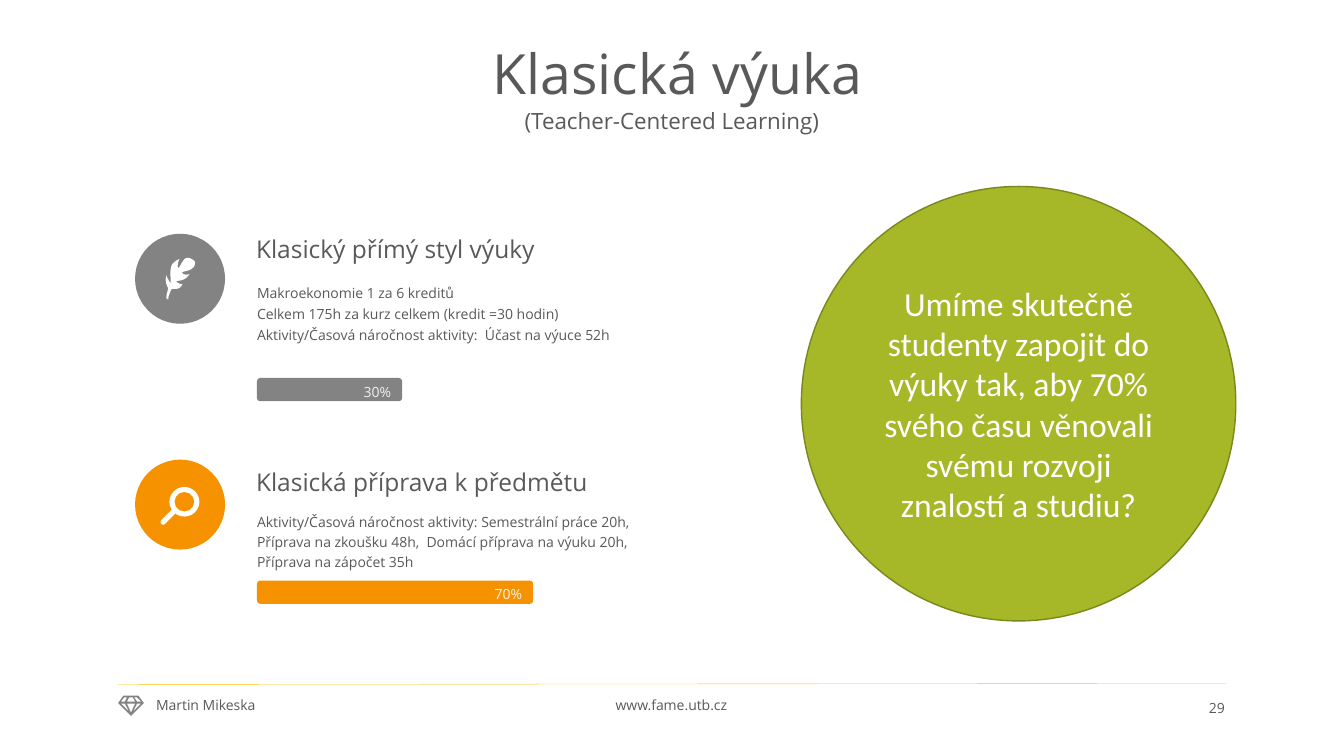
from lxml import etree
from pptx import Presentation
from pptx.dml.color import RGBColor
from pptx.enum.shapes import MSO_CONNECTOR, MSO_SHAPE
from pptx.enum.text import MSO_ANCHOR, MSO_AUTO_SIZE, PP_ALIGN
from pptx.oxml.ns import qn
from pptx.util import Pt

LEFT, CENTER, RIGHT = PP_ALIGN.LEFT, PP_ALIGN.CENTER, PP_ALIGN.RIGHT
TOP, MIDDLE = MSO_ANCHOR.TOP, MSO_ANCHOR.MIDDLE
OVAL, ROUNDED, DONUT = MSO_SHAPE.OVAL, MSO_SHAPE.ROUNDED_RECTANGLE, MSO_SHAPE.DONUT
COLORS = {name: RGBColor.from_string(value) for name, value in {
    "text": "595959", "gray": "838383", "orange": "F69200", "green": "A6B727",
    "olive": "7B871D", "gold": "FEC306", "white": "FFFFFF", "pale": "F2F2F2"}.items()}


def write(shape, lines, size, align=LEFT, anchor=TOP, spacing=None, color="text",
          font="Open Sans", inset=True):
    """Fill the shape with one paragraph per line, all formatted alike."""
    frame = shape.text_frame
    frame.word_wrap = True
    frame.auto_size = MSO_AUTO_SIZE.NONE
    frame.vertical_anchor = anchor
    if not inset:
        frame.margin_left = frame.margin_right = frame.margin_top = frame.margin_bottom = 0
    for index, line in enumerate(lines):
        para = frame.add_paragraph() if index else frame.paragraphs[0]
        para.text = line
        para.alignment = align
        para.line_spacing = spacing
        para.font.size = Pt(size)
        para.font.name = font
        para.font.color.rgb = COLORS[color]


def paint(shape, color):
    shape.shadow.inherit = False
    shape.fill.solid()
    shape.fill.fore_color.rgb = COLORS[color]
    shape.line.fill.background()
    return shape


deck = Presentation()
deck.slide_width, deck.slide_height = Pt(960), Pt(540)
page = deck.slides.add_slide(deck.slide_layouts[5])
shapes = page.shapes

# Title and subtitle
title = shapes.title
title.left, title.top, title.width, title.height = Pt(18), Pt(28), Pt(932), Pt(53.3)
write(title, ["Klasická výuka"], 39.6, CENTER, MIDDLE, 0.9)
subtitle = shapes.add_textbox(Pt(120), Pt(75), Pt(720), Pt(25))
write(subtitle, ["(Teacher-Centered Learning)"], 16, CENTER, MIDDLE, 0.9)

# Two sections: badge, heading, details and share bar
sections = [
    ("gray", 167, "Klasický přímý styl výuky", 162.7, 32.4, 0.9,
     ["Makroekonomie 1 za 6 kreditů",
      "Celkem 175h za kurz celkem (kredit =30 hodin)",
      "Aktivity/Časová náročnost aktivity:  Účast na výuce 52h"],
     200.2, 98, Pt(15), "30%", 270, 103.7),
    ("orange", 328.3, "Klasická příprava k předmětu", 326.9, 29.5, 1.2,
     ["Aktivity/Časová náročnost aktivity: Semestrální práce 20h, Příprava na "
      "zkoušku 48h,  Domácí příprava na výuku 20h, Příprava na zápočet 35h"],
     364.3, 39, 1.2, "70%", 414.7, 197.3),
]
for (color, badge_top, heading, heading_top, heading_height, heading_spacing, details,
     details_top, details_height, details_spacing, share, bar_top, bar_width) in sections:
    paint(shapes.add_shape(OVAL, Pt(96.5), Pt(badge_top), Pt(64.3), Pt(64.3)), color)
    heading_box = shapes.add_textbox(Pt(182.9), Pt(heading_top), Pt(262), Pt(heading_height))
    write(heading_box, [heading], 17.5, LEFT, MIDDLE, heading_spacing, inset=False)
    details_box = shapes.add_textbox(Pt(183.6), Pt(details_top), Pt(273), Pt(details_height))
    write(details_box, details, 10, spacing=details_spacing, inset=False)
    bar = paint(shapes.add_shape(ROUNDED, Pt(183.6), Pt(bar_top), Pt(bar_width), Pt(16.6)), color)
    bar.adjustments[0] = 0.15
    share_box = shapes.add_textbox(Pt(175.6 + bar_width - 40), Pt(bar_top + 1.4), Pt(40), Pt(13.7))
    write(share_box, [share], 10, RIGHT, TOP, 1.2, "pale", inset=False)

# Feather: each curve is two control points and an end point
feather_start = (120.2, 213.8)
feather_curves = [
    ((120.2, 211.7), (121, 210.2), (122.4, 206.6)), ((126, 205.9), (128.2, 207.4), (130.3, 203)),
    ((128.2, 203), (126, 201.6), (126, 200.9)), ((126, 200.2), (131.8, 201.6), (135.4, 195.8)),
    ((131, 197.3), (129.6, 194.4), (130.3, 194.4)), ((131, 193.7), (135.4, 193.7), (137.5, 191.5)),
    ((139, 190.8), (139.7, 187.9), (139, 186.5)), ((138.2, 185.8), (135.4, 183.6), (133.2, 184.3)),
    ((131, 184.3), (128.2, 191.5), (127.4, 191.5)), ((126.7, 191.5), (126.7, 187.9), (128.2, 185)),
    ((126, 185.8), (123.1, 187.9), (122.4, 190.1)), ((121, 193.7), (122.4, 201.6), (121.7, 202.3)),
    ((121.7, 202.3), (119.5, 198.7), (118.8, 196.6)), ((118.1, 199.4), (118.1, 202.3), (120.2, 205.9)),
    ((119.5, 208.8), (118.8, 211), (118.8, 212.4)), ((118.8, 213.8), (120.2, 213.8), (120.2, 213.8)),
]
outline, current = [], feather_start
for first, second, end in feather_curves:
    for step in range(1, 9):
        t = step / 8
        weights = ((1 - t) ** 3, 3 * t * (1 - t) ** 2, 3 * t * t * (1 - t), t ** 3)
        knots = (current, first, second, end)
        outline.append(tuple(Pt(sum(w * knot[axis] for w, knot in zip(weights, knots)))
                             for axis in (0, 1)))
    current = end
feather = shapes.build_freeform(Pt(feather_start[0]), Pt(feather_start[1]))
feather.add_line_segments(outline)
paint(feather.convert_to_shape(), "white")

# Magnifier
lens = paint(shapes.add_shape(DONUT, Pt(121), Pt(347.8), Pt(21.4), Pt(21.2)), "white")
lens.adjustments[0] = 0.17
handle = paint(shapes.add_shape(ROUNDED, Pt(113.2), Pt(367.4), Pt(14), Pt(3.8)), "white")
handle.adjustments[0] = 0.5
handle.rotation = -45

# Question
question = paint(shapes.add_shape(OVAL, Pt(572.4), Pt(133.2), Pt(310.3), Pt(310.3)), "green")
question.line.color.rgb = COLORS["olive"]
question.line.width = Pt(1)
write(question, ["Umíme skutečně studenty zapojit do výuky tak, aby 70% svého času "
                 "věnovali svému rozvoji znalostí a studiu?"],
      24, CENTER, MIDDLE, color="white", font="Calibri")

# Footer
rule = shapes.add_connector(MSO_CONNECTOR.STRAIGHT, Pt(84.2), Pt(488.9), Pt(875.5), Pt(488.2))
rule.line.color.rgb = COLORS["gold"]
rule.line.width = Pt(0.25)
etree.SubElement(rule._element.spPr, qn("a:effectLst"))

# Gem: outer outline, then its facets as holes
gem_contours = [
    [(88.2, 496.8), (98.8, 496.8), (102.8, 502.2), (93.6, 511.4), (84.4, 502.2)],
    [(97.9, 501.1), (95.8, 498.2), (97.9, 498.2), (100.8, 501.1)],
    [(95, 508.3), (97.9, 502.6), (100.8, 502.6)],
    [(93.6, 509), (90.7, 502.6), (96.5, 502.6)],
    [(86.4, 502.6), (89.3, 502.6), (92.2, 508.3)],
    [(88.6, 498.2), (90.7, 498.2), (89.3, 501.1), (86.4, 501.1)],
    [(95, 498.2), (96.5, 501.1), (90.7, 501.1), (92.2, 498.2)],
]
contours = [[(Pt(x), Pt(y)) for x, y in contour] for contour in gem_contours]
gem = shapes.build_freeform(*contours[0][0])
gem.add_line_segments(contours[0][1:])
for facet in contours[1:]:
    gem.move_to(*facet[0])
    gem.add_line_segments(facet[1:])
paint(gem.convert_to_shape(), "gray")

for label, left, top, width, align, anchor, spacing in [
        ("Martin Mikeska", 104.4, 495.4, 155.5, LEFT, TOP, 0.9),
        ("www.fame.utb.cz", 401.8, 495.4, 155.5, CENTER, TOP, 0.9),
        ("29", 789.1, 496.1, 92.9, RIGHT, MIDDLE, None)]:
    footer_box = shapes.add_textbox(Pt(left), Pt(top), Pt(width), Pt(18.4))
    write(footer_box, [label], 10, align, anchor, spacing)

deck.save("out.pptx")
